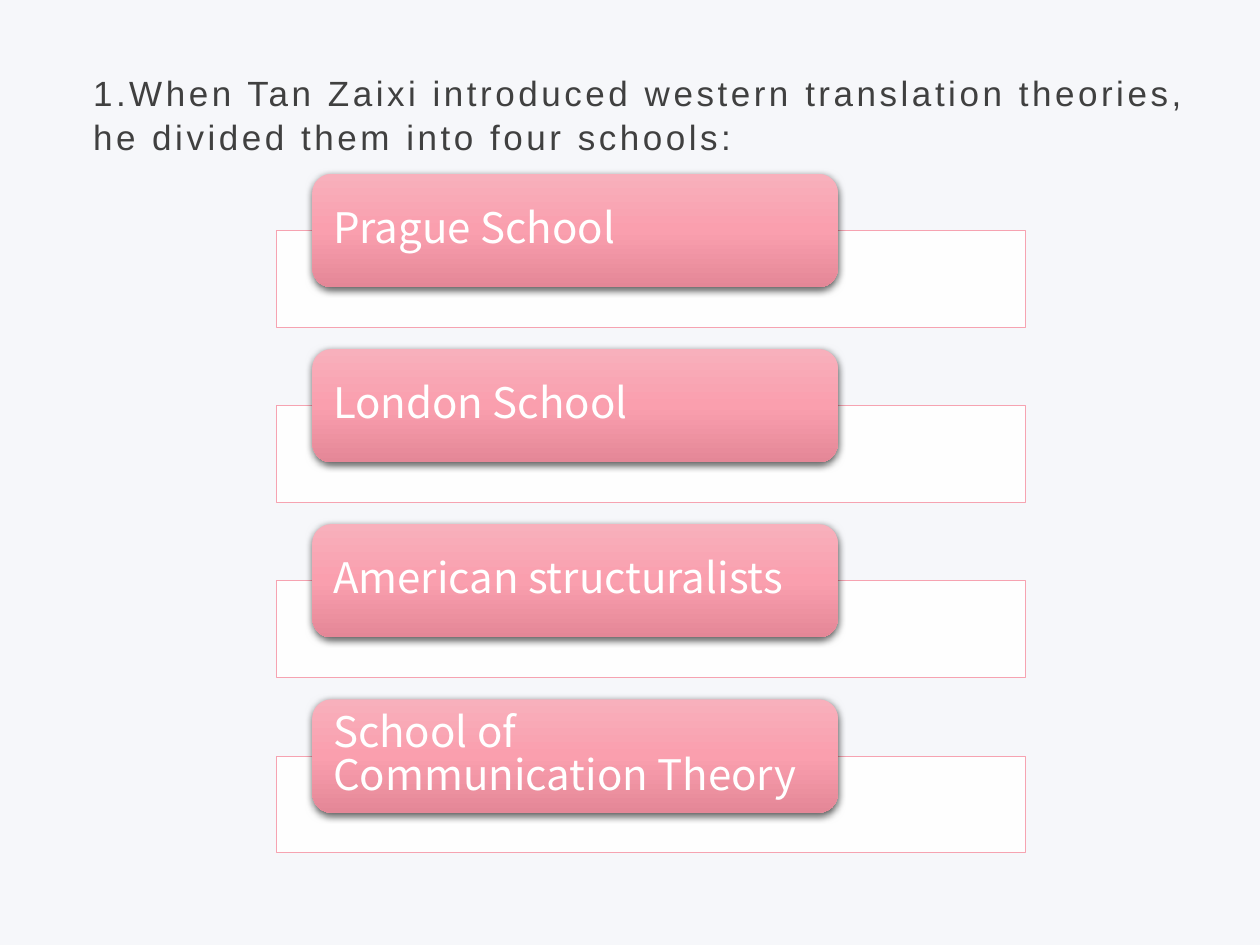
from pptx import Presentation
from pptx.dml.color import RGBColor
from pptx.enum.shapes import MSO_SHAPE
from pptx.enum.text import MSO_ANCHOR, PP_ALIGN
from pptx.oxml import parse_xml
from pptx.oxml.ns import nsdecls, qn
from pptx.util import Inches, Pt
from lxml import etree

RECT, ROUND = MSO_SHAPE.RECTANGLE, MSO_SHAPE.ROUNDED_RECTANGLE
TOP, MIDDLE = MSO_ANCHOR.TOP, MSO_ANCHOR.MIDDLE
LEFT = PP_ALIGN.LEFT

SCHOOLS = [
    "Prague School",
    "London School",
    "American structuralists",
    "School of Communication Theory",
]
FIRST_TOP, PITCH, BAR_OFFSET = 1.38, 1.39, 0.45


def rgb(value):
    return RGBColor.from_string(value)


def set_all(target, values):
    for name, value in values.items():
        setattr(target, name, value)


class Deck:
    background = "F6F7FA"
    bar_fill, bar_line = "FFFFFF", "F6A3B1"
    gradient = [(0, "F8B0BC"), (50, "FA9FAE"), (100, "E48797")]
    title = {"size": Pt(20), "name": "Arial"}
    label = {"size": Pt(24), "name": "Noto Sans CJK SC"}

    def __init__(self, prs):
        self.s = prs.slides.add_slide(prs.slide_layouts[6])
        fill = self.s.background.fill
        fill.solid()
        fill.fore_color.rgb = rgb(self.background)

    def add_text(self, sp, text, font, color, anchor, margins, spacing):
        tf = sp.text_frame
        side, edge = (Inches(m) for m in margins)
        set_all(tf, {"word_wrap": True, "vertical_anchor": anchor,
                     "margin_left": side, "margin_right": side,
                     "margin_top": edge, "margin_bottom": edge})
        p = tf.paragraphs[0]
        set_all(p, {"alignment": LEFT, "line_spacing": spacing})
        r = p.add_run()
        r.text = text
        set_all(r.font, font)
        r.font.color.rgb = rgb(color)
        return r

    def heading(self, text, *box):
        sp = self.s.shapes.add_textbox(*map(Inches, box))
        r = self.add_text(sp, text, self.title, "404040", TOP, (0.1, 0.05), 1.05)
        r._r.get_or_add_rPr().set("spc", "200")

    def shape(self, kind, *box):
        sp = self.s.shapes.add_shape(kind, *map(Inches, box))
        sp.shadow.inherit = False
        return sp

    def bar(self, *box):
        sp = self.shape(RECT, *box)
        sp.fill.solid()
        sp.fill.fore_color.rgb = rgb(self.bar_fill)
        color = sp._element.spPr.find(qn("a:solidFill"))[0]
        etree.SubElement(color, qn("a:alpha"), val="90000")
        sp.line.color.rgb = rgb(self.bar_line)
        sp.line.width = Pt(0.5)

    def pill(self, text, *box):
        sp = self.shape(ROUND, *box)
        sp.line.fill.background()
        sp.fill.gradient()
        sp.fill.gradient_angle = 270
        spPr = sp._element.spPr
        stops = spPr.find(qn("a:gradFill")).find(qn("a:gsLst"))
        for old in list(stops):
            stops.remove(old)
        for position, color in self.gradient:
            gs = etree.SubElement(stops, qn("a:gs"), pos=str(position * 1000))
            etree.SubElement(gs, qn("a:srgbClr"), val=color)
        spPr.find(qn("a:effectLst")).append(parse_xml(
            f'<a:outerShdw {nsdecls("a")} blurRad="{Pt(4.5)}" dist="{Pt(1.5)}" '
            'dir="5400000" rotWithShape="0"><a:srgbClr val="000000">'
            '<a:alpha val="63000"/></a:srgbClr></a:outerShdw>'))
        self.add_text(sp, text, self.label, "FFFFFF", MIDDLE, (0.12, 0), 0.85)


def main():
    prs = Presentation()
    set_all(prs, {"slide_width": Inches(10), "slide_height": Inches(7.5)})
    deck = Deck(prs)
    deck.heading("1.When Tan Zaixi introduced western translation theories, "
                 "he divided them into four schools:", 0.64, 0.5, 8.9, 0.74)
    for i, school in enumerate(SCHOOLS):
        top = FIRST_TOP + i * PITCH
        deck.bar(2.19, top + BAR_OFFSET, 5.95, 0.77)
        deck.pill(school, 2.48, top, 4.17, 0.9)
    prs.save("out.pptx")


if __name__ == "__main__":
    main()
